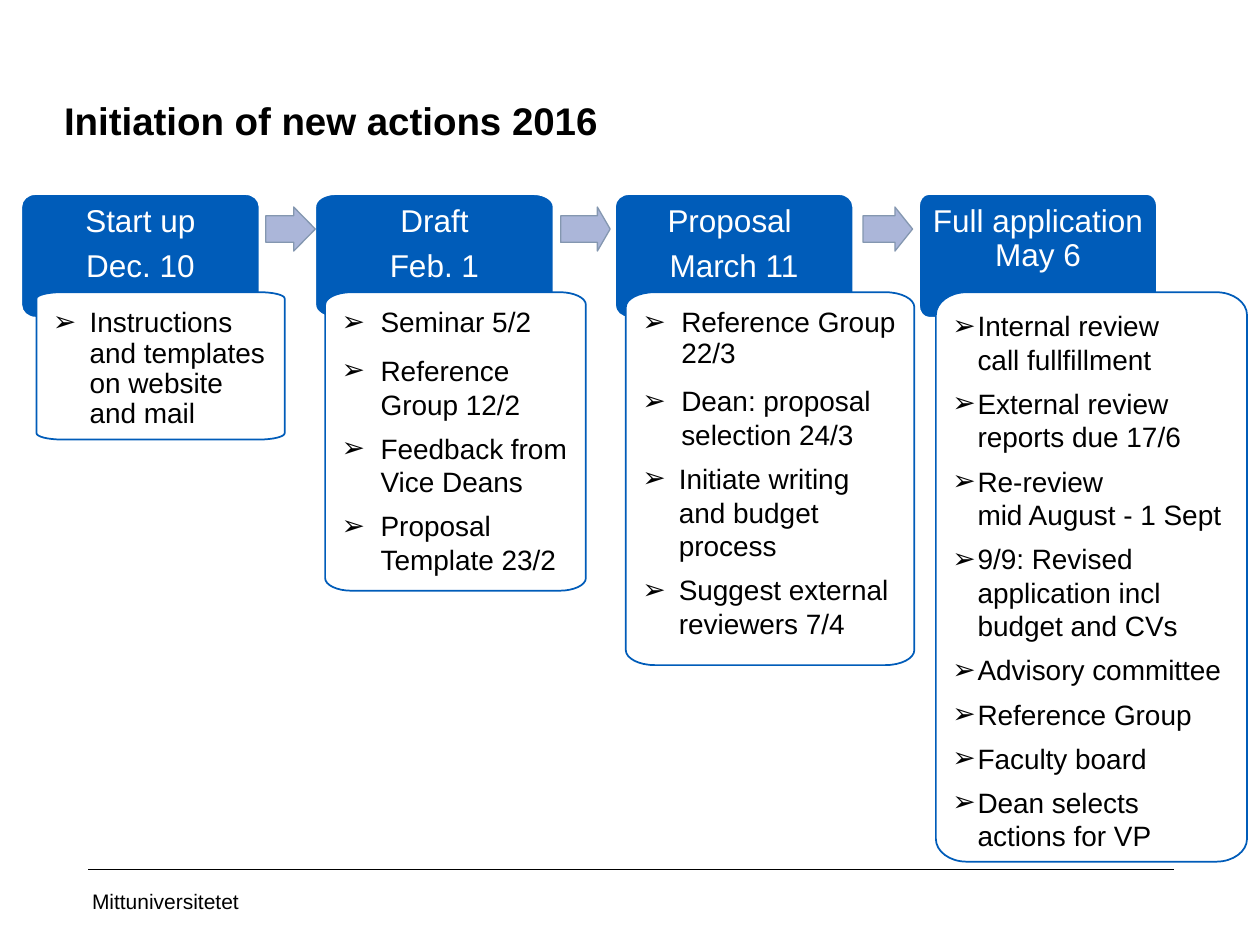
from lxml.etree import SubElement
from pptx import Presentation
from pptx.dml.color import RGBColor
from pptx.enum.shapes import MSO_CONNECTOR, MSO_SHAPE
from pptx.enum.text import MSO_ANCHOR, PP_ALIGN
from pptx.oxml.ns import qn
from pptx.util import Pt

HUES = {"ink": "000000", "paper": "FFFFFF", "blue": "005CB9",
        "arrow": "ABB6D9", "edge": "8497B0"}

STAGES = [
    {"head": (12.2, 110.9, 136.1, 70.6), "bend": 8,
     "title": ["Start up", "Dec. 10"],
     "card": (20.9, 167, 141.8, 84.2), "curve": (14.4, 3.6),
     "items": [("Instructions and templates on website and mail", 20.9)],
     "tight": True, "before": 6, "after": 0},
    {"head": (180.2, 110.9, 136.1, 70.6), "bend": 11.5,
     "title": ["Draft", "Feb. 1"],
     "card": (185.8, 167, 149, 170.6), "curve": (15, 7.2),
     "items": [("Seminar 5/2", 22.3), ("Reference Group 12/2", 22.3),
               ("Feedback from Vice Deans", 22.3),
               ("Proposal Template 23/2", 22.3)],
     "tight": True, "before": 6, "after": 0},
    {"head": (351.4, 110.9, 136.1, 70.6), "bend": 8,
     "title": ["Proposal ", "March 11"],
     "card": (357.6, 167, 164.9, 213.1), "curve": (16.6, 8.6),
     "items": [("Reference Group 22/3", 22.3),
               ("Dean: proposal selection 24/3", 22.3),
               ("Initiate writing and budget process", 20.9),
               ("Suggest external reviewers 7/4", 20.9)],
     "tight": True, "before": 6, "after": 0},
    {"head": (525.1, 110.9, 136.1, 70.6), "bend": 5.5,
     "title": ["Full application May 6"],
     "card": (534.8, 167, 177.8, 325.4), "curve": (17.5, 13),
     "items": [(text, 14.4) for text in (
         "Internal review\vcall fullfillment",
         "External review reports due 17/6",
         "Re-review\vmid August - 1 Sept",
         "9/9: Revised application incl budget and CVs",
         "Advisory committee", "Reference Group", "Faculty board",
         "Dean selects actions for VP")],
     "tight": False, "before": 0, "after": 6},
]

ARROWS = [((151.9, 118.3, 28.3, 25.2), 0.49),
          ((320.4, 118.3, 28.3, 25.2), 0.29),
          ((493.2, 118.3, 28.3, 25.2), 0.4)]


def tint(name):
    """Return the named colour."""
    return RGBColor.from_string(HUES[name])


def paint(shape, fill, line, width):
    """Set fill and line and drop the shadow."""
    shape.shadow.inherit = False
    shape.fill.solid()
    shape.fill.fore_color.rgb = tint(fill)
    shape.line.color.rgb = tint(line)
    shape.line.width = Pt(width)


def style(para, size, hue, bold=False):
    """Format each run of a paragraph."""
    for run in para.runs:
        run.font.name = "Arial"
        run.font.size = Pt(size)
        run.font.bold = bold
        run.font.color.rgb = tint(hue)


def frame(shape, sides, anchor=MSO_ANCHOR.TOP):
    """Set wrap, anchor and insets, and return the text frame."""
    text = shape.text_frame
    text.word_wrap = True
    text.vertical_anchor = anchor
    (text.margin_left, text.margin_top,
     text.margin_right, text.margin_bottom) = map(Pt, sides)
    return text


def panel(slide, box, curve):
    """Draw a box with oval corners, each one a single curve."""
    x, y, w, h = box
    rx, ry = curve
    kx, ky = 0.45 * rx, 0.45 * ry
    r, b = x + w, y + h
    dots = [(x, y + ry),
            (x, y + ky), (x + kx, y), (x + rx, y), (r - rx, y),
            (r - kx, y), (r, y + ky), (r, y + ry), (r, b - ry),
            (r, b - ky), (r - kx, b), (r - rx, b), (x + rx, b),
            (x + kx, b), (x, b - ky), (x, b - ry)]
    dots = [(Pt(left), Pt(top)) for left, top in dots]
    pen = slide.shapes.build_freeform(*dots[0])
    pen.add_line_segments(dots[1:], close=True)
    shape = pen.convert_to_shape()
    steps = list(shape._element.iter(qn("a:lnTo")))
    for start in range(0, 15, 4):
        first, second, last = steps[start:start + 3]
        bow = first.makeelement(qn("a:cubicBezTo"))
        first.addprevious(bow)
        for step in (first, second, last):
            bow.append(step[0])
            step.getparent().remove(step)
    return shape


def head(slide, box, bend, lines):
    """Draw the blue heading of a stage."""
    shape = panel(slide, box, (bend, 7.2))
    paint(shape, "blue", "paper", 1)
    text = frame(shape, (6.5, 6.5, 6.5, 23.8))
    text.text = "\n".join(lines)
    for para in text.paragraphs:
        para.alignment = PP_ALIGN.CENTER
        para.line_spacing = 0.9
        para.space_after = Pt(6.3)
        style(para, 18, "paper")


def bullet(para, indent):
    """Give a paragraph an arrow bullet with a hanging indent."""
    props = para._p.get_or_add_pPr()
    props.set("marL", str(Pt(indent)))
    props.set("indent", str(-Pt(indent)))
    SubElement(props, qn("a:buFont")).set("typeface", "Arial")
    SubElement(props, qn("a:buChar")).set("char", "➢")


def card(slide, box, stage):
    """Draw the white list of a stage."""
    shape = panel(slide, box, stage["curve"])
    paint(shape, "paper", "blue", 1)
    text = frame(shape, (9.4, 9.4, 9.4, 9.4))
    text.text = "\n".join(item for item, _ in stage["items"])
    for rank, (para, (_, indent)) in enumerate(
            zip(text.paragraphs, stage["items"])):
        first = rank == 0
        tight = first and stage["tight"]
        bullet(para, indent)
        para.alignment = PP_ALIGN.LEFT
        para.line_spacing = 0.9 if tight else 1.0
        para.space_before = Pt(0 if first else stage["before"])
        para.space_after = Pt(2.4 if tight else stage["after"])
        style(para, 16, "ink")


def arrow(slide, box, tip):
    """Draw an arrow between two stages."""
    shape = slide.shapes.add_shape(MSO_SHAPE.RIGHT_ARROW, *map(Pt, box))
    shape.adjustments[0] = 0.6
    shape.adjustments[1] = tip
    paint(shape, "arrow", "edge", 0.75)


def label(slide, box, words, size, sides, anchor, bold=False):
    """Place one line of plain text."""
    text = frame(slide.shapes.add_textbox(*map(Pt, box)), sides, anchor)
    text.text = words
    style(text.paragraphs[0], size, "ink", bold)


def footer(slide, box):
    """Draw the rule and the sender below it."""
    x, y, w, h = box
    label(slide, (x - 0.7, y + 3.6, 162, h - 3.6), "Mittuniversitetet", 12,
          (2.9, 3.6, 7.2, 3.6), MSO_ANCHOR.MIDDLE)
    rule = slide.shapes.add_connector(
        MSO_CONNECTOR.STRAIGHT, Pt(x), Pt(y), Pt(x + w), Pt(y))
    rule.line.color.rgb = tint("ink")
    rule.line.width = Pt(0.25)
    SubElement(rule._element.spPr, qn("a:effectLst"))


def main():
    """Build and save the slide."""
    deck = Presentation()
    deck.slide_width, deck.slide_height = Pt(720), Pt(540)
    slide = deck.slides.add_slide(deck.slide_layouts[6])
    footer(slide, (50.4, 496.8, 620.6, 32.4))
    for stage in STAGES:
        head(slide, stage["head"], stage["bend"], stage["title"])
        card(slide, stage["card"], stage)
    for box, tip in ARROWS:
        arrow(slide, box, tip)
    label(slide, (29.5, 51.8, 555.8, 54.7), "Initiation of new actions 2016",
          22, (7.2, 3.6, 7.2, 3.6), MSO_ANCHOR.TOP, True)
    deck.save("out.pptx")


if __name__ == "__main__":
    main()
